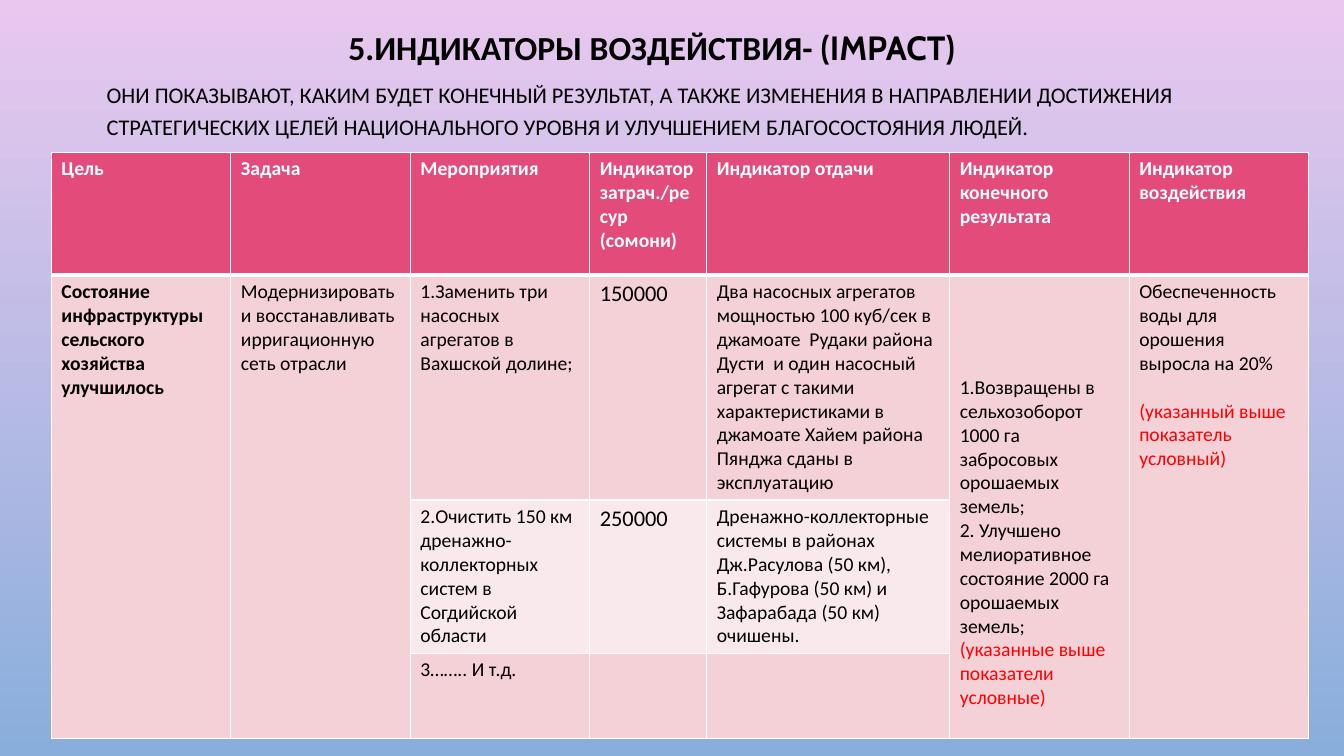
from lxml.etree import SubElement
from pptx import Presentation
from pptx.dml.color import RGBColor
from pptx.enum.text import MSO_ANCHOR, MSO_AUTO_SIZE, PP_ALIGN
from pptx.oxml.ns import qn
from pptx.util import Inches, Pt

BLACK = RGBColor(0x00, 0x00, 0x00)
WHITE = RGBColor(0xFF, 0xFF, 0xFF)
RED = RGBColor(0xFF, 0x00, 0x00)
HEADER_PINK = RGBColor(0xE3, 0x4B, 0x7A)
BAND_DARK = RGBColor(0xF4, 0xD0, 0xD7)
BAND_LIGHT = RGBColor(0xFA, 0xE9, 0xEC)
SKY_TOP = RGBColor(0xE9, 0xC8, 0xEF)
SKY_BOTTOM = RGBColor(0x89, 0xAE, 0xDB)

BODY_FONT = "Calibri"
COLUMN_WIDTHS = [1.78, 1.78, 1.78, 1.16, 2.41, 1.78, 1.78]
ROW_HEIGHTS = [1.22, 2.23, 1.52, 0.85]
GOAL, TASK, ACTIVITY, COST, OUTPUT, OUTCOME, IMPACT = range(7)
MERGED_COLUMNS = (GOAL, TASK, OUTCOME, IMPACT)

HEADERS = [
    "Цель", "Задача", "Мероприятия", "Индикатор затрач./ресур\n(сомони)",
    "Индикатор отдачи", "Индикатор конечного результата", "Индикатор воздействия",
]
BODY_ROWS = [
    {
        GOAL: "Состояние инфраструктуры сельского хозяйства улучшилось",
        TASK: "Модернизировать и восстанавливать ирригационную сеть отрасли",
        ACTIVITY: "1.Заменить три насосных агрегатов в Вахшской долине;",
        COST: "150000",
        OUTPUT: "Два насосных агрегатов мощностью 100 куб/сек в джамоате  Рудаки района "
                "Дусти  и один насосный агрегат с такими характеристиками в джамоате "
                "Хайем района Пянджа сданы в эксплуатацию",
        OUTCOME: "1.Возвращены в сельхозоборот 1000 га забросовых орошаемых земель;\n"
                 "2. Улучшено мелиоративное состояние 2000 га орошаемых земель; ",
        IMPACT: "Обеспеченность воды для орошения выросла на 20%",
    },
    {
        ACTIVITY: "2.Очистить 150 км дренажно- коллекторных систем в Согдийской области",
        COST: "250000",
        OUTPUT: "Дренажно-коллекторные системы в районах Дж.Расулова (50 км), "
                "Б.Гафурова (50 км) и Зафарабада (50 км) очишены.",
    },
    {ACTIVITY: "3…….. И т.д."},
]


def set_font(paragraph, size, color, bold=False):
    font = paragraph.font
    font.name, font.size, font.bold = BODY_FONT, Pt(size), bold
    font.color.rgb = color


def paint_background(slide):
    fill = slide.background.fill
    fill.gradient()
    fill.gradient_angle = 270
    for stop, position, color in zip(fill.gradient_stops, (0, 1), (SKY_TOP, SKY_BOTTOM)):
        stop.position = position
        stop.color.rgb = color


def write_title(slide):
    title = slide.shapes.title
    title.left, title.top = Inches(1.75), Inches(0.19)
    title.width, title.height = Inches(9.5), Inches(0.53)
    frame = title.text_frame
    frame.auto_size = MSO_AUTO_SIZE.NONE
    frame.vertical_anchor = MSO_ANCHOR.BOTTOM
    paragraph = frame.paragraphs[0]
    paragraph.alignment = PP_ALIGN.CENTER
    paragraph.line_spacing = 0.9
    set_font(paragraph, 24, BLACK, bold=True)
    for text, font_name in (("5.ИНДИКАТОРЫ ВОЗДЕЙСТВИЯ- ", BODY_FONT), ("(IMPACT) ", "Cabin")):
        run = paragraph.add_run()
        run.text = text
        run.font.name = font_name


def write_explanation(slide):
    box = slide.shapes.add_textbox(Inches(0.96), Inches(0.7), Inches(11.25), Inches(0.9))
    box.text_frame.word_wrap = True
    paragraph = box.text_frame.paragraphs[0]
    paragraph.text = (
        "ОНИ ПОКАЗЫВАЮТ, КАКИМ БУДЕТ КОНЕЧНЫЙ РЕЗУЛЬТАТ, А ТАКЖЕ ИЗМЕНЕНИЯ В НАПРАВЛЕНИИ "
        "ДОСТИЖЕНИЯ СТРАТЕГИЧЕСКИХ ЦЕЛЕЙ НАЦИОНАЛЬНОГО УРОВНЯ И УЛУЧШЕНИЕМ "
        "БЛАГОСОСТОЯНИЯ ЛЮДЕЙ."
    )
    paragraph.line_spacing = 1.2
    set_font(paragraph, 16, BLACK)


def set_borders(cell, bottom_width):
    """Draw white cell borders, placed before the fill as the schema requires."""
    properties = cell._tc.get_or_add_tcPr()
    for index, (side, width) in enumerate(
        (("lnL", 1), ("lnR", 1), ("lnT", 1), ("lnB", bottom_width))
    ):
        line = SubElement(properties, qn(f"a:{side}"), w=str(Pt(width)))
        SubElement(SubElement(line, qn("a:solidFill")), qn("a:srgbClr"), val=str(WHITE))
        properties.insert(index, line)


def fill_cell(cell, text, fill_color, text_color=BLACK, size=14, bold=False, bottom_width=1):
    cell.fill.solid()
    cell.fill.fore_color.rgb = fill_color
    set_borders(cell, bottom_width)
    cell.text = text
    for paragraph in cell.text_frame.paragraphs:
        set_font(paragraph, size, text_color, bold)


def add_red_notes(table):
    outcome, impact = table.cell(1, OUTCOME), table.cell(1, IMPACT)
    outcome.margin_top = Inches(1)
    note = outcome.text_frame.paragraphs[-1].add_run()
    note.text = "(указанные выше показатели условные)"
    note.font.color.rgb = RED
    paragraph = impact.text_frame.add_paragraph()
    paragraph.text = "(указанный выше показатель условный)"
    paragraph.space_before = Pt(17)
    set_font(paragraph, 14, RED)


def add_indicator_table(slide):
    table = slide.shapes.add_table(
        len(ROW_HEIGHTS), len(COLUMN_WIDTHS), Inches(0.51), Inches(1.51),
        Inches(sum(COLUMN_WIDTHS)), Inches(sum(ROW_HEIGHTS)),
    ).table
    for column, width in zip(table.columns, COLUMN_WIDTHS):
        column.width = Inches(width)
    for row, height in zip(table.rows, ROW_HEIGHTS):
        row.height = Inches(height)
    for column, header in enumerate(HEADERS):
        fill_cell(table.cell(0, column), header, HEADER_PINK, WHITE, bold=True, bottom_width=3)
    for row, texts in enumerate(BODY_ROWS, start=1):
        for column in range(len(COLUMN_WIDTHS)):
            banded = row == 2 and column not in MERGED_COLUMNS
            fill_cell(
                table.cell(row, column), texts.get(column, ""),
                BAND_LIGHT if banded else BAND_DARK,
                size=16 if column == COST else 14, bold=column == GOAL,
            )
    for column in MERGED_COLUMNS:
        table.cell(1, column).merge(table.cell(len(BODY_ROWS), column))
    add_red_notes(table)


def main():
    presentation = Presentation()
    presentation.slide_width, presentation.slide_height = Inches(13.33), Inches(7.5)
    slide = presentation.slides.add_slide(presentation.slide_layouts[5])
    paint_background(slide)
    write_title(slide)
    write_explanation(slide)
    add_indicator_table(slide)
    presentation.save("out.pptx")


if __name__ == "__main__":
    main()
